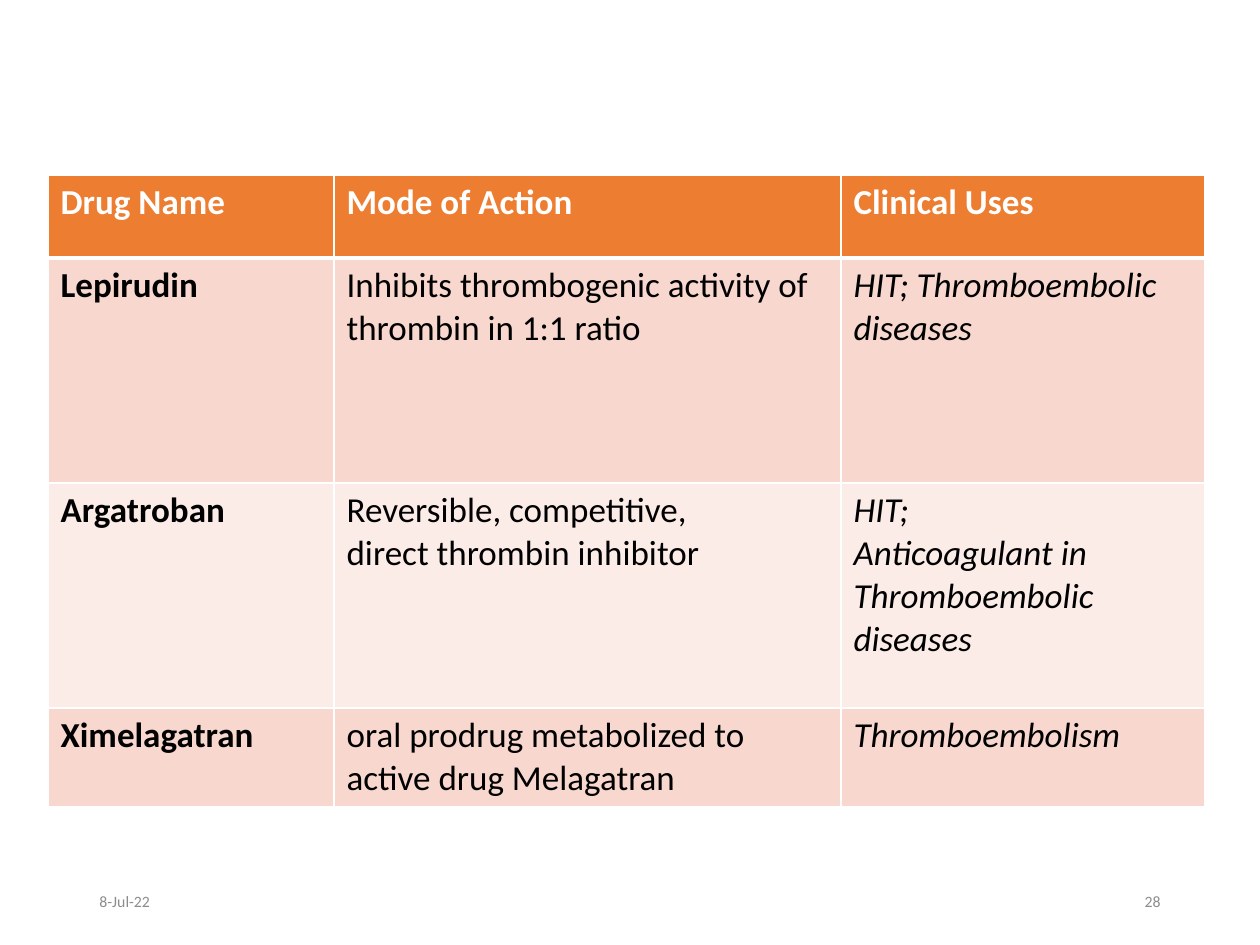
from typing import NamedTuple

from lxml.etree import SubElement
from pptx import Presentation
from pptx.dml.color import RGBColor
from pptx.enum.text import MSO_ANCHOR, PP_ALIGN
from pptx.oxml.ns import qn
from pptx.util import Emu, Pt

PX_PER_INCH = 126
FONT = "Calibri"
WHITE = RGBColor(0xFF, 0xFF, 0xFF)
BLACK = RGBColor(0x00, 0x00, 0x00)
GREY = RGBColor(0x8C, 0x8C, 0x8C)
ORANGE = RGBColor(0xED, 0x7D, 0x31)
ROSE = RGBColor(0xF8, 0xD7, 0xCE)
PALE_ROSE = RGBColor(0xFC, 0xEC, 0xE8)

TABLE_LEFT, TABLE_TOP = 48, 175
COLUMN_WIDTHS = [286, 507, 364]
ROW_HEIGHTS = [83, 225, 225, 98]


class Style(NamedTuple):
    size: int
    color: RGBColor
    bold: bool = False
    italic: bool = False


class Drug(NamedTuple):
    name: str
    action: str
    uses: str


class FooterItem(NamedTuple):
    text: str
    left: int
    align: PP_ALIGN


HEADER = Drug("Drug Name", "Mode of Action", "Clinical Uses")
DRUGS = [
    Drug("Lepirudin", "Inhibits thrombogenic activity of thrombin in 1:1 ratio",
         "HIT; Thromboembolic diseases"),
    Drug("Argatroban", "Reversible, competitive,\ndirect thrombin inhibitor",
         "HIT;\nAnticoagulant in Thromboembolic diseases"),
    Drug("Ximelagatran", "oral prodrug metabolized to active drug Melagatran",
         "Thromboembolism"),
]
HEADER_STYLE = Style(20, WHITE, bold=True)
BODY_STYLES = [Style(20, BLACK, bold=True), Style(20, BLACK), Style(20, BLACK, italic=True)]
FOOTER_STYLE = Style(9, GREY)
FOOTER = [
    FooterItem("8-Jul-22", 87, PP_ALIGN.LEFT),
    FooterItem("28", 890, PP_ALIGN.RIGHT),
]


def px(length: int) -> Emu:
    return Emu(round(length * 914400 / PX_PER_INCH))


def write(frame, text: str, style: Style, align: PP_ALIGN = PP_ALIGN.LEFT) -> None:
    """Put each line of text in its own paragraph."""
    for index, line in enumerate(text.split("\n")):
        paragraph = frame.add_paragraph() if index else frame.paragraphs[0]
        paragraph.alignment = align
        run = paragraph.add_run()
        run.text = line
        font = run.font
        font.name, font.size = FONT, Pt(style.size)
        font.bold, font.italic = style.bold, style.italic
        font.color.rgb = style.color


def set_borders(cell, top: int, bottom: int) -> None:
    """White borders, widths in points; they must precede the fill."""
    properties = cell._tc.get_or_add_tcPr()
    sides = {"a:lnL": 1, "a:lnR": 1, "a:lnT": top, "a:lnB": bottom}
    for index, (tag, width) in enumerate(sides.items()):
        line = SubElement(properties, qn(tag), w=str(Pt(width)))
        SubElement(SubElement(line, qn("a:solidFill")), qn("a:srgbClr"), val=str(WHITE))
        properties.insert(index, line)


def add_drug_table(slide) -> None:
    rows = [HEADER, *DRUGS]
    table = slide.shapes.add_table(
        len(rows), len(COLUMN_WIDTHS), px(TABLE_LEFT), px(TABLE_TOP),
        px(sum(COLUMN_WIDTHS)), px(sum(ROW_HEIGHTS))).table
    for column, width in zip(table.columns, COLUMN_WIDTHS):
        column.width = px(width)
    for row, height in zip(table.rows, ROW_HEIGHTS):
        row.height = px(height)

    for r, drug in enumerate(rows):
        fill = ORANGE if r == 0 else ROSE if r % 2 else PALE_ROSE
        for c, text in enumerate(drug):
            cell = table.cell(r, c)
            cell.fill.solid()
            cell.fill.fore_color.rgb = fill
            set_borders(cell, top=3 if r == 1 else 1, bottom=3 if r == 0 else 1)
            write(cell.text_frame, text, BODY_STYLES[c] if r else HEADER_STYLE)


def add_footer_item(slide, item: FooterItem) -> None:
    frame = slide.shapes.add_textbox(px(item.left), px(876), px(283), px(50)).text_frame
    frame.word_wrap = True
    frame.vertical_anchor = MSO_ANCHOR.MIDDLE
    write(frame, item.text, FOOTER_STYLE, item.align)


def main() -> None:
    presentation = Presentation()
    presentation.slide_width, presentation.slide_height = px(1260), px(945)
    slide = presentation.slides.add_slide(presentation.slide_layouts[6])
    add_drug_table(slide)
    for item in FOOTER:
        add_footer_item(slide, item)
    presentation.save("out.pptx")


if __name__ == "__main__":
    main()
